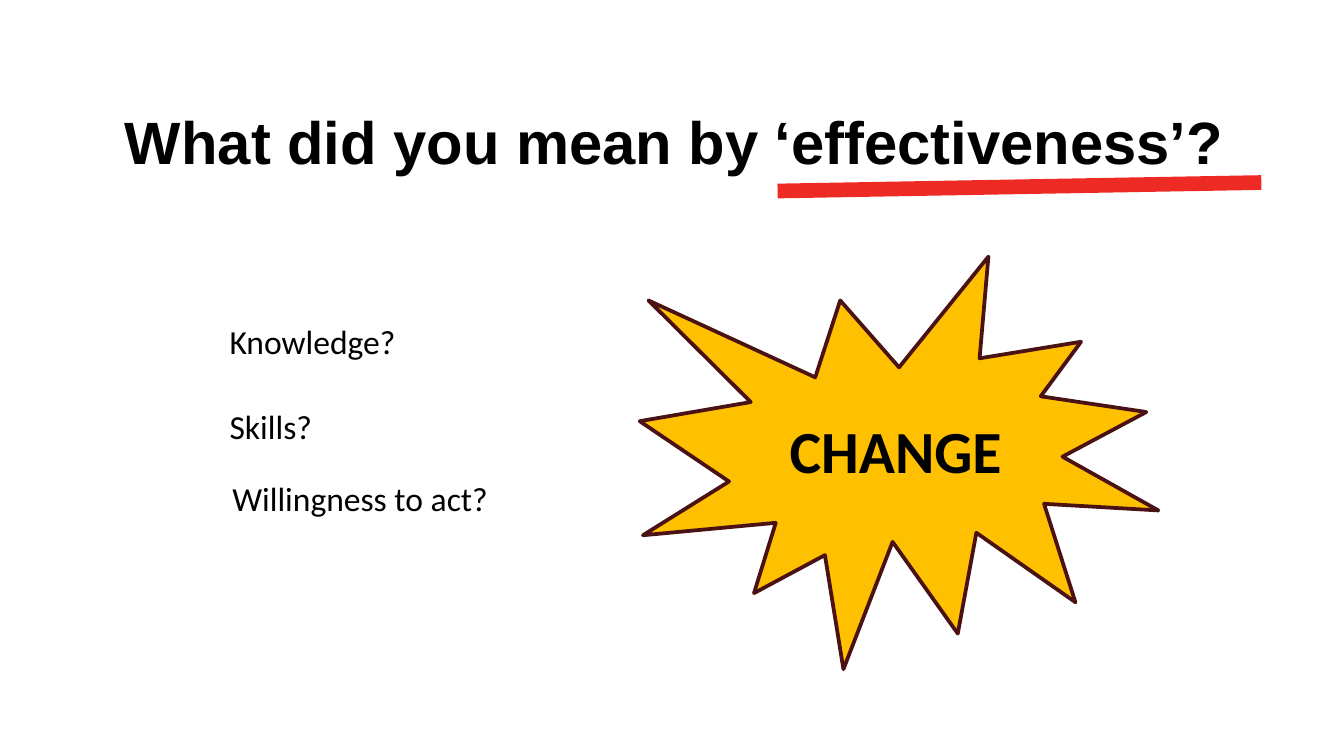
from pptx import Presentation
from pptx.dml.color import RGBColor
from pptx.enum.shapes import MSO_SHAPE
from pptx.enum.text import MSO_ANCHOR, PP_ALIGN
from pptx.util import Inches, Pt

COLORS = {
    "text": "000000",
    "underline": "EE2A24",
    "burst": "FFC000",
    "burst_line": "4B1214",
}


def color(name):
    return RGBColor.from_string(COLORS[name])


def write_text(shape, text, font_name, size, bold=False,
               alignment=PP_ALIGN.LEFT, anchor=MSO_ANCHOR.TOP):
    frame = shape.text_frame
    frame.word_wrap = True
    frame.vertical_anchor = anchor
    frame.text = text
    paragraph = frame.paragraphs[0]
    paragraph.alignment = alignment
    font = paragraph.font
    font.name = font_name
    font.size = Pt(size)
    font.bold = bold
    font.color.rgb = color("text")


def set_title(slide, text):
    title = slide.shapes.title
    title.left, title.top = Inches(0.83), Inches(0.73)
    title.width, title.height = Inches(8.43), Inches(0.64)
    write_text(title, text, "Arial", 32, bold=True)


def add_shape(slide, kind, left, top, width, height, fill):
    shape = slide.shapes.add_shape(
        kind, Inches(left), Inches(top), Inches(width), Inches(height))
    shape.shadow.inherit = False
    shape.fill.solid()
    shape.fill.fore_color.rgb = color(fill)
    return shape


def add_underline(slide):
    """Draw the slightly tilted bar below the last word of the title."""
    bar = add_shape(slide, MSO_SHAPE.RECTANGLE, 7.53, -0.41, 0.11, 3.6, "underline")
    bar.rotation = 89
    bar.line.fill.background()


def add_question(slide, text, left, top):
    box = slide.shapes.add_textbox(
        Inches(left), Inches(top), Inches(2.52), Inches(0.4))
    write_text(box, text, "Calibri", 18)


def add_burst(slide, text):
    burst = add_shape(slide, MSO_SHAPE.EXPLOSION1, 4.76, 1.91, 3.86, 3.07, "burst")
    burst.line.color.rgb = color("burst_line")
    burst.line.width = Pt(2)
    write_text(burst, text, "Calibri", 32, bold=True,
               alignment=PP_ALIGN.CENTER, anchor=MSO_ANCHOR.MIDDLE)


def main():
    presentation = Presentation()
    presentation.slide_width = Inches(10)
    presentation.slide_height = Inches(10) * 9 // 16
    title_only = presentation.slide_layouts[5]
    slide = presentation.slides.add_slide(title_only)

    set_title(slide, "What did you mean by ‘effectiveness’?")
    add_underline(slide)
    for text, left, top in [
        ("Knowledge?", 1.61, 2.34),
        ("Skills?", 1.61, 2.97),
        ("Willingness to act?", 1.63, 3.51),
    ]:
        add_question(slide, text, left, top)
    add_burst(slide, "CHANGE")

    presentation.save("out.pptx")


if __name__ == "__main__":
    main()
